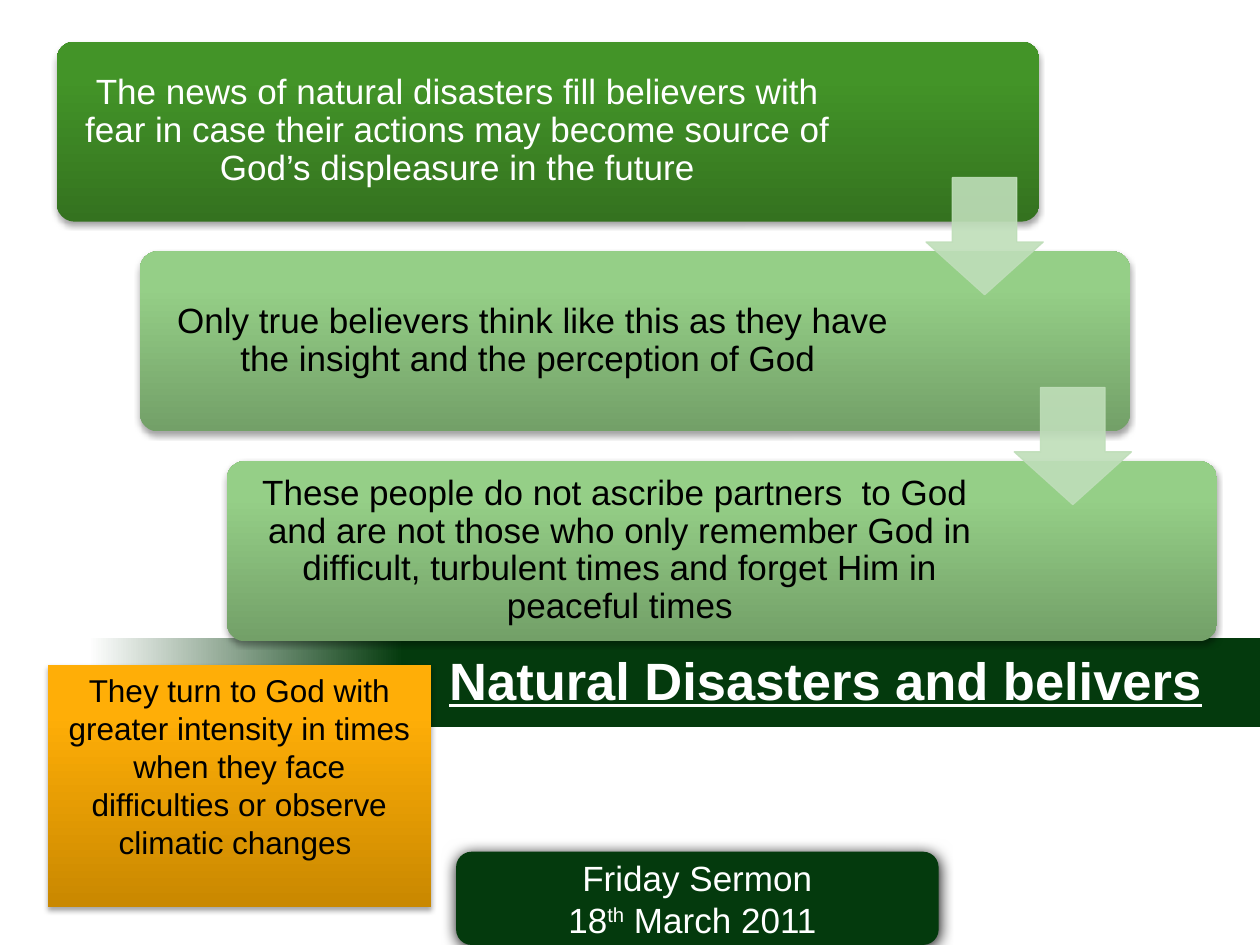
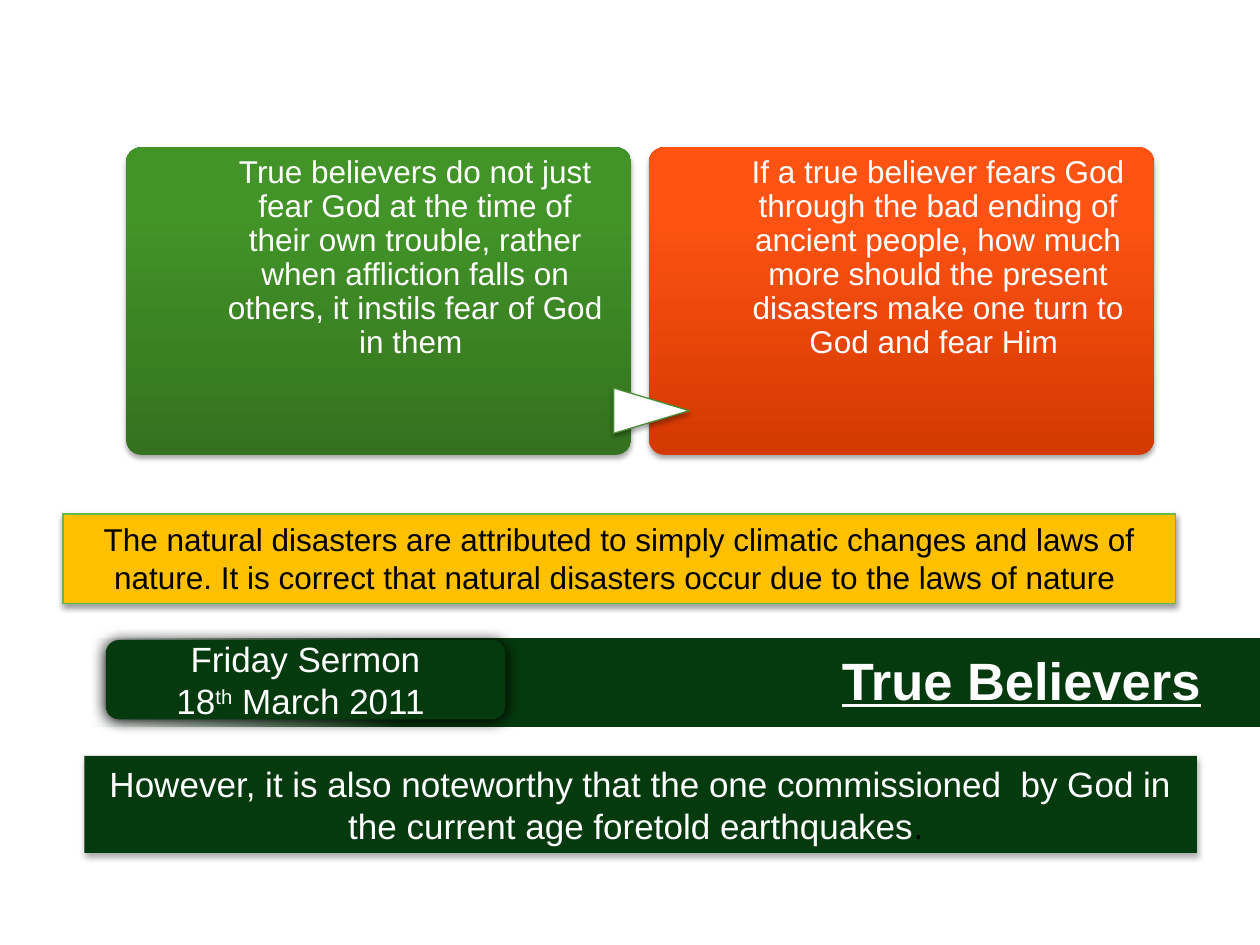
from lxml import etree
from pptx import Presentation
from pptx.dml.color import RGBColor
from pptx.enum.shapes import MSO_SHAPE as Shape
from pptx.enum.text import MSO_ANCHOR as Anchor, MSO_AUTO_SIZE as AutoSize, PP_ALIGN as Align
from pptx.oxml import parse_xml
from pptx.oxml.ns import nsdecls, qn
from pptx.util import Inches, Pt

FONT = "Arial"
WHITE = RGBColor(0xFF, 0xFF, 0xFF)
BLACK = RGBColor(0, 0, 0)
DARK_GREEN = RGBColor(0x04, 0x3A, 0x0D)
AMBER = RGBColor(0xFF, 0xC0, 0x00)
NOTE_EDGE = RGBColor(0x62, 0xBC, 0x45)
POINTER_EDGE = RGBColor(0x4B, 0x8C, 0x36)
PALE_GREEN = RGBColor(0xBF, 0xDE, 0xB9)


def ramp(*colours):
    """Gradient stops from the bottom edge to the top edge."""
    return list(zip((0, 80, 100), map(RGBColor.from_string, colours)))


GREEN = ramp("34721F", "439428", "429726")
LIGHT_GREEN = ramp("73A068", "95CF87", "95D286")
RED = ramp("D33900", "FF5313", "FF5414")
ORANGE = ramp("C98800", "FFAE07", "FFAF08")
BAND = [(7, WHITE), (32, DARK_GREEN)]

# Shadows: opacity in percent, blur and distance in points
SOFT = (35, 3.1, 1.8)
NOTE_SHADOW = (38, 3.1, 1.6)
CLOSING_SHADOW = (32, 3.5, 2.2)
HEAVY = (100, 8.5, 1)


# Shared drawing helpers
def set_gradient(sp, stops, angle):
    sp.fill.background()
    stop_xml = "".join(f'<a:gs pos="{pos * 1000}"><a:srgbClr val="{colour}"/></a:gs>'
                       for pos, colour in stops)
    grad = parse_xml(f'<a:gradFill {nsdecls("a")} rotWithShape="1"><a:gsLst>{stop_xml}</a:gsLst>'
                     f'<a:lin ang="{angle * 60000}" scaled="0"/></a:gradFill>')
    no_fill = sp.element.spPr.find(qn("a:noFill"))
    no_fill.getparent().replace(no_fill, grad)


def set_shadow(sp, opacity, blur, distance):
    effects = sp.element.spPr.find(qn("a:effectLst"))
    effects.append(parse_xml(
        f'<a:outerShdw {nsdecls("a")} blurRad="{Pt(blur)}" dist="{Pt(distance)}" dir="5400000" '
        f'algn="ctr" rotWithShape="0"><a:srgbClr val="000000">'
        f'<a:alpha val="{opacity * 1000}"/></a:srgbClr></a:outerShdw>'))


def set_opacity(sp, percent):
    for colour in sp.element.spPr.iter(qn("a:srgbClr")):
        etree.SubElement(colour, qn("a:alpha")).set("val", str(percent * 1000))


def add_box(s, kind, box, fill, line=None, shadow=None, angle=270, adj=()):
    sp = s.shapes.add_shape(kind, *map(Inches, box))
    for i, value in enumerate(adj):
        sp.adjustments[i] = value
    if isinstance(fill, list):
        set_gradient(sp, fill, angle)
    else:
        sp.fill.solid()
        sp.fill.fore_color.rgb = fill
    if line is None:
        sp.line.fill.background()
    else:
        sp.line.color.rgb = line
        sp.line.width = Pt(0.75)
    sp.shadow.inherit = False
    if shadow:
        set_shadow(sp, *shadow)
    return sp


def style_run(r, size, colour):
    r.font.name = FONT
    r.font.size = Pt(size)
    r.font.color.rgb = colour


def write(sp, text, size, colour, anchor=Anchor.TOP, insets=(0.1, 0.05, 0.1, 0.05),
          align=Align.CENTER, spacing=None):
    tf = sp.text_frame
    tf.text = text
    tf.word_wrap = True
    tf.auto_size = AutoSize.NONE
    tf.vertical_anchor = anchor
    tf.margin_left, tf.margin_top, tf.margin_right, tf.margin_bottom = map(Inches, insets)
    for p in tf.paragraphs:
        p.alignment = align
        if spacing:
            p.line_spacing = spacing
        for r in p.runs:
            style_run(r, size, colour)
    return tf


def add_label(s, box, text, size, colour, **options):
    write(s.shapes.add_textbox(*map(Inches, box)), text, size, colour, spacing=0.9, **options)


# Parts found on both slides
def add_titled_slide(prs, text, left, width):
    s = prs.slides.add_slide(prs.slide_layouts.get_by_name("Title Only"))
    title = s.shapes.title
    band = add_box(s, Shape.RECTANGLE, (0, 5.06, 10, 0.71), BAND, angle=0)
    title.element.addprevious(band.element)
    title.left, title.top, title.width, title.height = map(Inches, (left, 5.08, width, 0.62))
    tf = write(title, text, 30, WHITE, Anchor.MIDDLE, (0, 0.05, 0, 0.05), Align.RIGHT)
    font = tf.paragraphs[0].runs[0].font
    font.bold = font.underline = True
    return s


def add_sermon_date(s, box):
    sp = add_box(s, Shape.ROUNDED_RECTANGLE, box, DARK_GREEN, shadow=HEAVY)
    tf = write(sp, "Friday Sermon\n18", 20, WHITE, Anchor.MIDDLE)
    for text, baseline in (("th", 30000), (" March 2011 ", 0)):
        r = tf.paragraphs[1].add_run()
        r.text = text
        style_run(r, 20, WHITE)
        r._r.get_or_add_rPr().set("baseline", str(baseline))


# Slide 1: descending steps
def add_steps(s, top, height, pitch, steps):
    for i, (left, width, text_width, fill, colour, text) in enumerate(steps):
        y = top + i * pitch
        add_box(s, Shape.ROUNDED_RECTANGLE, (left, y, width, height), fill, shadow=SOFT, adj=[0.1])
        add_label(s, (left + 0.04, y + 0.04, text_width, height - 0.09), text, 20, colour,
                  anchor=Anchor.MIDDLE, insets=(0.08,) * 4)
    for i in range(len(steps) - 1):
        arrow = add_box(s, Shape.DOWN_ARROW, (7.35 + 0.7 * i, top + 1.08 + i * pitch, 0.93, 0.93),
                        PALE_GREEN, PALE_GREEN, adj=[0.55, 0.45])
        # The arrow adjustments are head length, then shaft width
        arrow.adjustments[0], arrow.adjustments[1] = 0.55, 0.45
        set_opacity(arrow, 90)


def build_disasters(prs):
    s = add_titled_slide(prs, "Natural Disasters and belivers", 0.67, 8.87)
    add_sermon_date(s, (3.62, 6.76, 3.83, 0.74))
    add_steps(s, 0.33, 1.43, 3.33 / 2, [
        (0.45, 7.8, 6.28, GREEN, WHITE,
         "The news of natural disasters fill believers with fear in case their actions "
         "may become source of God’s displeasure in the future"),
        (1.11, 7.86, 6.16, LIGHT_GREEN, BLACK,
         "Only true believers think like this as they have the insight and the "
         "perception of God "),
        (1.8, 7.86, 6.16, LIGHT_GREEN, BLACK,
         "These people do not ascribe partners  to God  and are not those who only remember "
         "God in difficult, turbulent times and forget Him in peaceful times"),
    ])
    # Consequence note
    note = add_box(s, Shape.RECTANGLE, (0.38, 5.28, 3.04, 1.92), ORANGE, shadow=SOFT)
    write(note, "They turn to God with greater intensity in times when they face difficulties "
                "or observe climatic changes ", 18, BLACK)


# Slide 2: two linked cards with statements below
def add_linked_cards(s, left, top, width, height, cards):
    pitch = width + 0.14
    for i, (fill, text) in enumerate(cards):
        x = left + i * pitch
        add_box(s, Shape.ROUNDED_RECTANGLE, (x, top, width, height), fill, shadow=SOFT, adj=[0.05])
        add_label(s, (x + 0.8, top, 2.99, height), text, 18, WHITE, insets=(0, 0.07, 0, 0))
    pointer = add_box(s, Shape.FLOWCHART_EXTRACT, (left + width - 0.02, top + 1.79, 0.36, 0.6),
                      WHITE, POINTER_EDGE, SOFT)
    pointer.rotation = 90


def build_believers(prs):
    s = add_titled_slide(prs, "True Believers", 2.61, 6.92)
    note = add_box(s, Shape.RECTANGLE, (0.5, 4.08, 8.83, 0.71), AMBER, NOTE_EDGE, NOTE_SHADOW)
    write(note, "The natural disasters are attributed to simply climatic changes and laws of nature. "
                "It is correct that natural disasters occur due to the laws of nature ", 18, BLACK)
    add_linked_cards(s, 1, 1.17, 4.01, 2.44, [
        (GREEN, "True believers do not just fear God at the time of their own trouble, rather "
                "when affliction falls on others, it instils fear of God in them "),
        (RED, "If a true believer fears God through the bad ending of ancient people, how much "
              "more should the present disasters make one turn to God and fear Him "),
    ])
    add_sermon_date(s, (0.84, 5.08, 3.17, 0.63))
    # Closing statement
    closing = add_box(s, Shape.RECTANGLE, (0.67, 6, 8.83, 0.77), DARK_GREEN, shadow=CLOSING_SHADOW)
    tf = write(closing, "However, it is also noteworthy that the one commissioned  by God in the "
                        "current age foretold earthquakes", 20, WHITE)
    r = tf.paragraphs[0].add_run()
    r.text = ". "
    style_run(r, 20, BLACK)


def main():
    prs = Presentation()
    prs.slide_width, prs.slide_height = Inches(10), Inches(7.5)
    build_disasters(prs)
    build_believers(prs)
    prs.save("out.pptx")


if __name__ == "__main__":
    main()
